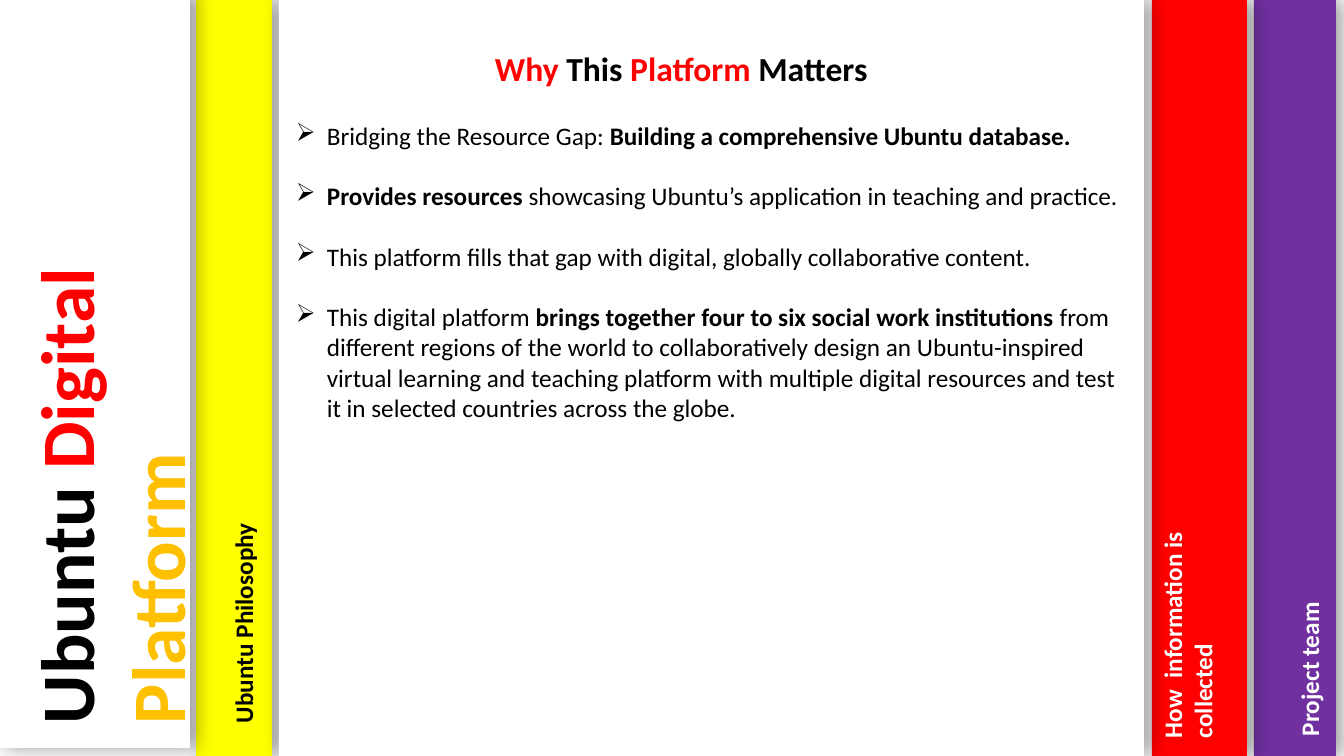
from lxml.etree import SubElement
from pptx import Presentation
from pptx.dml.color import RGBColor
from pptx.enum.shapes import MSO_SHAPE
from pptx.oxml.ns import qn
from pptx.util import Pt

PX = 12192000 / 1344
WIDE, HIGH = 1344, 756
FONT = "Calibri"
BLACK = RGBColor(0, 0, 0)
WHITE = RGBColor(255, 255, 255)
RED = RGBColor(255, 0, 0)
YELLOW = RGBColor(255, 255, 0)
GOLD = RGBColor(255, 192, 0)
PURPLE = RGBColor(112, 48, 160)

TITLE = [("Ubuntu ", BLACK, True), ("Digital ", RED, True), ("Platform", GOLD, True)]
HEAD = [("Why", RED, True), (" This ", BLACK, True),
        ("Platform ", RED, True), ("Matters", BLACK, True)]
POINTS = [
    [("Bridging the Resource Gap: ", BLACK, False),
     ("Building a comprehensive Ubuntu database.", BLACK, True)],
    [("Provides resources ", BLACK, True),
     ("showcasing Ubuntu’s application in teaching and practice.", BLACK, False)],
    [("This platform fills that gap with digital, globally collaborative content.",
      BLACK, False)],
    [("This digital platform ", BLACK, False),
     ("brings together four to six social work institutions ", BLACK, True),
     ("from different regions of the world to collaboratively design an "
      "Ubuntu-inspired virtual learning and teaching platform with multiple "
      "digital resources and test it in selected countries across the globe.",
      BLACK, False)],
]


def emu(*lengths):
    """Turn px lengths into EMU."""
    return [round(length * PX) for length in lengths]


def panel(slide, box, color):
    """Draw a filled panel that casts a soft shadow to its right."""
    shape = slide.shapes.add_shape(MSO_SHAPE.RECTANGLE, *emu(*box))
    shape.fill.solid()
    shape.fill.fore_color.rgb = color
    shape.line.fill.background()
    shape.shadow.inherit = False
    effects = shape._element.spPr.find(qn("a:effectLst"))
    shade = SubElement(effects, qn("a:outerShdw"), blurRad=str(Pt(15)),
                       dist=str(Pt(3)), dir="0", algn="l", rotWithShape="0")
    tint = SubElement(shade, qn("a:srgbClr"), val=str(BLACK))
    SubElement(tint, qn("a:alpha"), val="40000")


def bullet(para):
    """Give a paragraph an arrow bullet, a hanging indent and a gap below."""
    para.space_after = Pt(21.6)
    props = para._p.get_or_add_pPr()
    indent, = emu(31)
    props.set("marL", str(indent))
    props.set("indent", str(-indent))
    SubElement(props, qn("a:buChar"), char="➢")


def write(slide, box, paras, size, listed=False):
    """Place paragraphs of coloured runs in a wrapping text box."""
    shape = slide.shapes.add_textbox(*emu(*box))
    frame = shape.text_frame
    frame.word_wrap = True
    for index, runs in enumerate(paras):
        para = frame.add_paragraph() if index else frame.paragraphs[0]
        if listed:
            bullet(para)
        para.font.name = FONT
        para.font.size = Pt(size)
        for text, color, bold in runs:
            run = para.add_run()
            run.text = text
            run.font.color.rgb = color
            run.font.bold = bold
    return shape


def tab(slide, box, color, label, runs, size):
    """Draw a side panel with text that reads upward inside it."""
    panel(slide, box, color)
    left, top, width, height = label
    across = box[0] + left + (width - height) / 2
    down = box[1] + top + (height - width) / 2
    write(slide, (across, down, height, width), [runs], size).rotation = 270


def page(slide, box):
    """Draw the open page with its heading and bullet points."""
    left, top, width, height = box
    panel(slide, box, WHITE)
    write(slide, (left + 206, top + 43, 475, 92), [HEAD], 24)
    write(slide, (left + 7, top + 115, 843, 407), POINTS, 18, listed=True)


def main():
    """Build the slide and save it."""
    deck = Presentation()
    deck.slide_width, deck.slide_height = emu(WIDE, HIGH)
    slide = deck.slides.add_slide(deck.slide_layouts[6])
    tab(slide, (1254, 0, 82, HIGH), PURPLE, (35, 541, 40, 205),
        [("Project team", WHITE, True)], 18)
    tab(slide, (1152, 0, 95, HIGH), RED, (0, 496, 72, 252),
        [("How  information is collected", WHITE, True)], 18)
    tab(slide, (196, 0, 76, HIGH), YELLOW, (27, 387, 40, 346),
        [("Ubuntu Philosophy", BLACK, True)], 18)
    page(slide, (279, 0, 865, HIGH))
    tab(slide, (0, -8, 190, HIGH), WHITE, (14, 254, 194, 488), TITLE, 54)
    deck.save("out.pptx")


if __name__ == "__main__":
    main()
